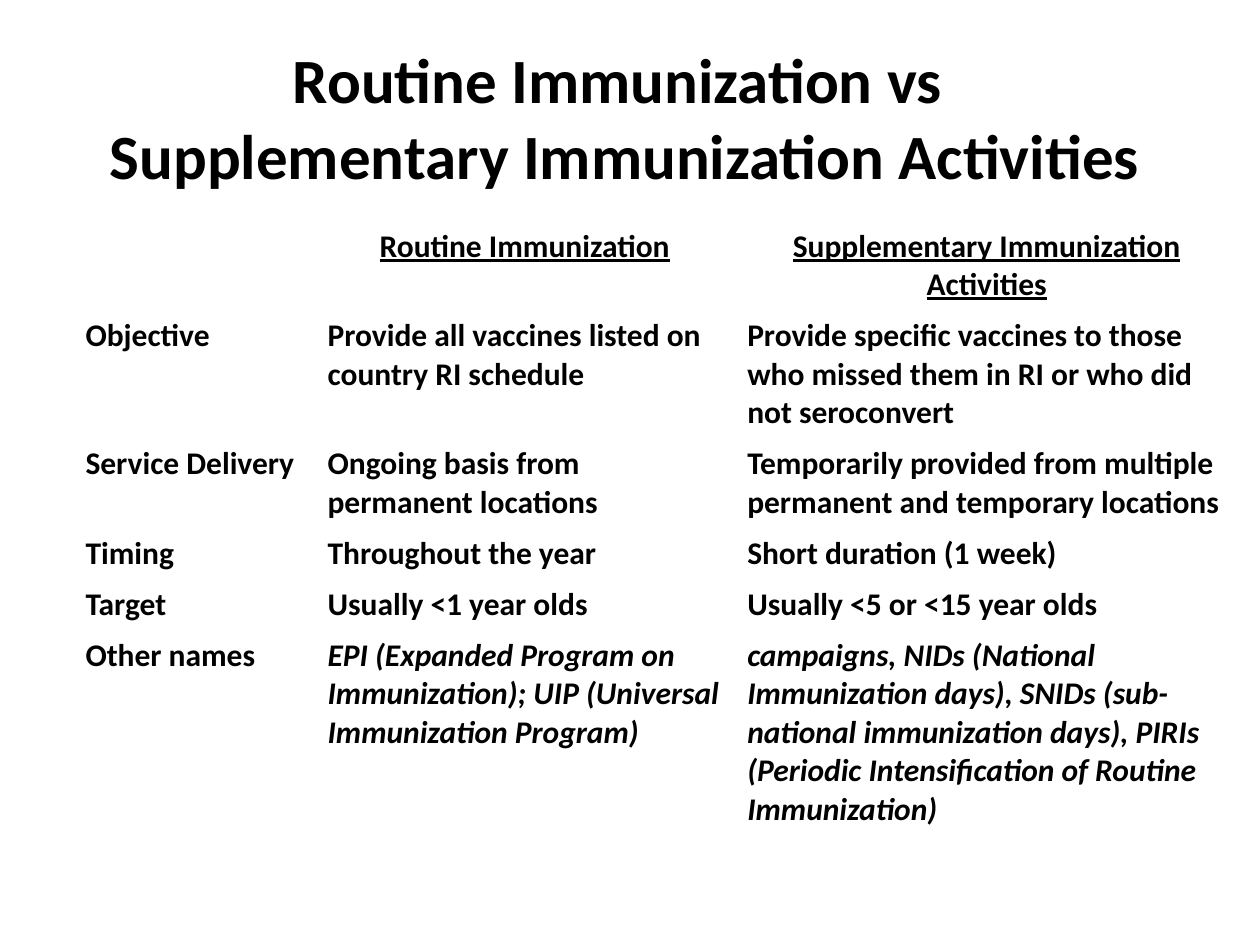
from dataclasses import dataclass

from pptx import Presentation
from pptx.dml.color import RGBColor
from pptx.enum.text import MSO_ANCHOR, MSO_AUTO_SIZE, PP_ALIGN
from pptx.util import Cm, Pt


@dataclass(frozen=True)
class Theme:
    font: str = "Calibri"
    ink: RGBColor = RGBColor(0, 0, 0)
    title_size: int = 36
    table_size: int = 18


@dataclass(frozen=True)
class Row:
    label: str
    routine: str
    supplementary: str
    header: bool = False
    italic: bool = False


THEME = Theme()
COLUMN_WIDTHS = (4.88, 8.46, 10.16)
ROW_HEIGHT = 1.03
ROWS = (
    Row("", "Routine Immunization", "Supplementary Immunization Activities", header=True),
    Row("Objective", "Provide all vaccines listed on country RI schedule",
        "Provide specific vaccines to those who missed them in RI or who did not seroconvert"),
    Row("Service Delivery", "Ongoing basis from permanent locations",
        "Temporarily provided from multiple permanent and temporary locations"),
    Row("Timing", "Throughout the year", "Short duration (1 week)"),
    Row("Target", "Usually <1 year olds", "Usually <5 or <15 year olds"),
    Row("Other names",
        "EPI (Expanded Program on Immunization); UIP (Universal Immunization Program)",
        "campaigns, NIDs (National Immunization days), SNIDs (sub-national immunization days), "
        "PIRIs (Periodic Intensification of Routine Immunization)", italic=True),
)


def write(tf, text: str, *, size: int, align=PP_ALIGN.LEFT,
          italic: bool = False, underline: bool = False) -> None:
    """Write bold text into the first paragraph, with a line break at each newline."""
    p = tf.paragraphs[0]
    p.alignment = align
    for i, line in enumerate(text.split("\n")):
        if i:
            p.add_line_break()
        r = p.add_run()
        r.text = line
        r.font.name, r.font.size = THEME.font, Pt(size)
        r.font.color.rgb = THEME.ink
        r.font.bold, r.font.italic, r.font.underline = True, italic, underline


def add_title(s, text: str) -> None:
    sp = s.shapes.title
    sp.left, sp.top, sp.width, sp.height = Cm(0.43), Cm(0.76), Cm(24.33), Cm(3.18)
    tf = sp.text_frame
    tf.auto_size = MSO_AUTO_SIZE.NONE
    tf.vertical_anchor = MSO_ANCHOR.MIDDLE
    write(tf, text, size=THEME.title_size, align=PP_ALIGN.CENTER)


def add_comparison(s, rows: tuple[Row, ...]) -> None:
    table = s.shapes.add_table(len(rows), len(COLUMN_WIDTHS), Cm(1.47), Cm(4.45),
                               Cm(sum(COLUMN_WIDTHS)), Cm(ROW_HEIGHT * len(rows))).table
    table.first_row = table.horz_banding = False
    for column, width in zip(table.columns, COLUMN_WIDTHS):
        column.width = Cm(width)
    for i, row in enumerate(rows):
        table.rows[i].height = Cm(ROW_HEIGHT)
        for j, text in enumerate((row.label, row.routine, row.supplementary)):
            cell = table.cell(i, j)
            cell.fill.background()
            write(cell.text_frame, text, size=THEME.table_size,
                  align=PP_ALIGN.CENTER if row.header else PP_ALIGN.LEFT,
                  italic=row.italic and j > 0, underline=row.header)


def main() -> None:
    prs = Presentation()
    prs.slide_width, prs.slide_height = Cm(25.4), Cm(19.05)
    s = prs.slides.add_slide(prs.slide_layouts[5])  # title only
    # Heading
    add_title(s, "Routine Immunization vs \nSupplementary Immunization Activities")
    # Comparison table
    add_comparison(s, ROWS)
    prs.save("out.pptx")


if __name__ == "__main__":
    main()
